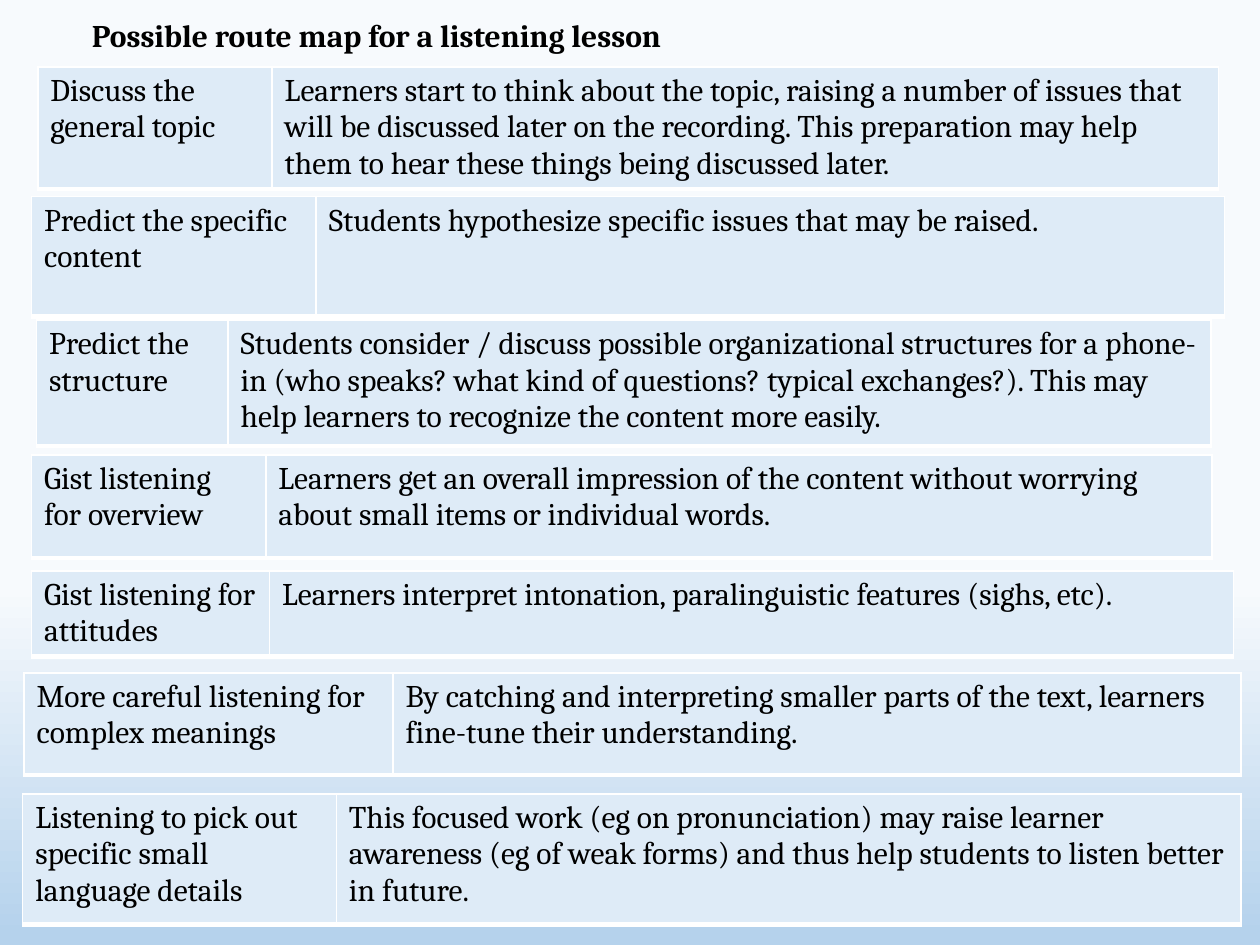
from copy import deepcopy

from lxml.etree import SubElement
from pptx import Presentation
from pptx.dml.color import RGBColor
from pptx.enum.text import MSO_ANCHOR as Anchor, MSO_AUTO_SIZE as AutoSize, PP_ALIGN as Align
from pptx.oxml.ns import qn
from pptx.util import Inches, Pt

TEXT, WHITE, CELL = "000000", "FFFFFF", "DEEBF7"
FONT = {"name": "Cambria", "size": Pt(18), "bold": False}
FRAME = {"word_wrap": True, "auto_size": AutoSize.NONE, "vertical_anchor": Anchor.TOP}
BORDERS = {"a:lnL": 1, "a:lnR": 1, "a:lnT": 1, "a:lnB": 3}
BACKGROUND = [(0.62, "F7FAFD"), (0.99, "B5D2EC"), (1, "B5D2EC"), (1, "CEE1F2")]

STAGES = [
    ((0.3, 0.53, 9.37, 0.97), 1.86, "Discuss the general topic",
     "Learners start to think about the topic, raising a number of issues that will be "
     "discussed later on the recording. This preparation may help them to hear these "
     "things being discussed later."),
    ((0.25, 1.56, 9.47, 0.95), 2.26, "Predict the specific content",
     "Students hypothesize specific issues that may be raised."),
    ((0.29, 2.54, 9.32, 1), 1.52, "Predict the structure",
     "Students consider / discuss possible organizational structures for a phone-in "
     "(who speaks? what kind of questions? typical exchanges?). This may help learners "
     "to recognize the content more easily."),
    ((0.25, 3.61, 9.37, 0.82), 1.86, "Gist listening for overview",
     "Learners get an overall impression of the content without worrying about small "
     "items or individual words."),
    ((0.25, 4.53, 9.54, 0.68), 1.89, "Gist listening for attitudes",
     "Learners interpret intonation, paralinguistic features (sighs, etc)."),
    ((0.19, 5.34, 9.66, 0.81), 2.93, "More careful listening for complex meanings",
     "By catching and interpreting smaller parts of the text, learners fine-tune their "
     "understanding."),
    ((0.18, 6.3, 9.67, 1.04), 2.49, "Listening to pick out specific small language details",
     "This focused work (eg on pronunciation) may raise learner awareness (eg of weak "
     "forms) and thus help students to listen better in future."),
]


def color(value):
    return RGBColor.from_string(value)


def apply_format(target, values):
    for name, value in values.items():
        setattr(target, name, value)


def write_text(paragraph, text, **changes):
    run = paragraph.add_run()
    run.text = text
    apply_format(run.font, FONT | changes)
    run.font.color.rgb = color(TEXT)


def paint_background(slide):
    fill = slide.background.fill
    fill.gradient()
    fill.gradient_angle = 270
    stop_list = next(slide.element.iter(qn("a:gsLst")))
    for _ in range(len(BACKGROUND) - len(stop_list)):
        stop_list.append(deepcopy(stop_list[-1]))
    for stop, (position, value) in zip(fill.gradient_stops, BACKGROUND):
        stop.position = position
        stop.color.rgb = color(value)


def add_title(slide, box, text):
    title = slide.shapes.title
    apply_format(title, dict(zip(("left", "top", "width", "height"), map(Inches, box))))
    apply_format(title.text_frame, FRAME)
    paragraph = title.text_frame.paragraphs[0]
    paragraph.alignment = Align.LEFT
    write_text(paragraph, text, bold=True)


def add_borders(cell):
    properties = cell._tc.get_or_add_tcPr()
    for index, (tag, points) in enumerate(BORDERS.items()):
        line = SubElement(properties, qn(tag), w=str(Pt(points)))
        solid = SubElement(line, qn("a:solidFill"))
        SubElement(solid, qn("a:srgbClr"), val=WHITE)
        properties.insert(index, line)


def add_stage(slide, box, label_width, label, description):
    table = slide.shapes.add_table(1, 2, *map(Inches, box)).table
    apply_format(table, {"first_row": False, "horz_banding": False})
    widths = (label_width, box[2] - label_width)
    for column, cell, width, text in zip(table.columns, table.iter_cells(), widths,
                                         (label, description)):
        column.width = Inches(width)
        cell.fill.solid()
        cell.fill.fore_color.rgb = color(CELL)
        add_borders(cell)
        write_text(cell.text_frame.paragraphs[0], text)


def main():
    presentation = Presentation()
    apply_format(presentation, {"slide_width": Inches(10), "slide_height": Inches(7.5)})
    slide = presentation.slides.add_slide(presentation.slide_layouts[5])
    paint_background(slide)
    for stage in STAGES:
        add_stage(slide, *stage)
    add_title(slide, (0.63, 0.08, 7.73, 0.4), "Possible route map for a listening lesson")
    presentation.save("out.pptx")


if __name__ == "__main__":
    main()
